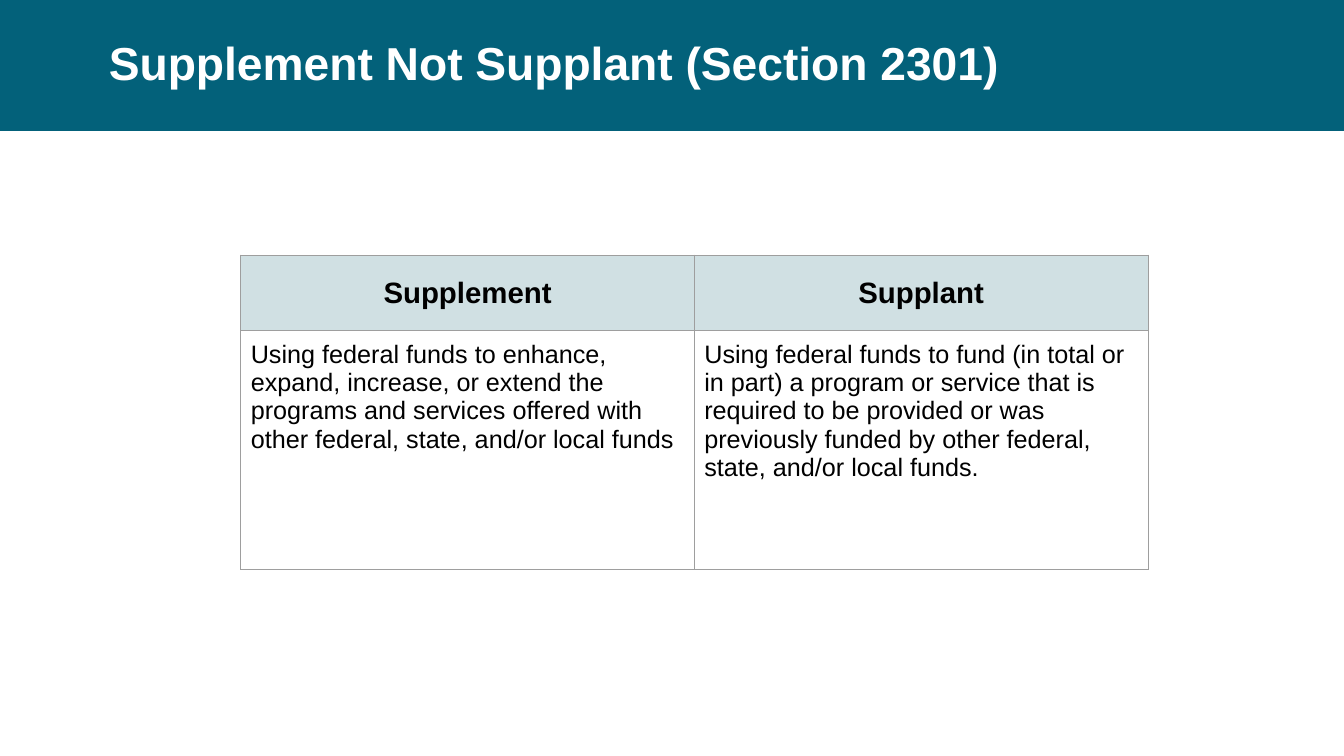
"""Build the Supplement Not Supplant slide."""
from lxml import etree
from pptx import Presentation
from pptx import util as u
from pptx.dml.color import RGBColor
from pptx.enum import shapes, text
from pptx.oxml.ns import qn

TEAL, PALE, GREY, WHITE, BLACK = "03617A", "D0E0E3", "9E9E9E", "FFFFFF", "000000"
WIDE, BAND = u.Cm(33.87), u.Cm(3.3)
HEADS = ("Supplement", "Supplant")
BODIES = (
    "Using federal funds to enhance, expand, increase, or extend the programs "
    "and services offered with other federal, state, and/or local funds",
    "Using federal funds to fund (in total or in part) a program or service that "
    "is required to be provided or was previously funded by other federal, "
    "state, and/or local funds.",
)


def paint(fill, hue):
    """Give a fill one solid colour."""
    fill.solid()
    fill.fore_color.rgb = RGBColor.from_string(hue)


def write(para, words, size, hue, bold=False):
    """Add one Arial run to a paragraph."""
    run = para.add_run()
    run.text = words
    font = run.font
    font.name, font.size, font.bold = "Arial", u.Pt(size), bold
    font.color.rgb = RGBColor.from_string(hue)


def head(slide, words):
    """Set the title on a full-width band."""
    title = slide.shapes.title
    band = slide.shapes.add_shape(shapes.MSO_SHAPE.RECTANGLE, 0, 0, WIDE, BAND)
    band.shadow.inherit = False
    paint(band.fill, TEAL)
    band.line.fill.background()
    title.element.addprevious(band.element)
    title.left, title.top = u.Cm(2.49), 0
    title.width, title.height = u.Cm(29.21), BAND
    frame = title.text_frame
    frame.auto_size = text.MSO_AUTO_SIZE.NONE
    frame.vertical_anchor = text.MSO_ANCHOR.MIDDLE
    para = frame.paragraphs[0]
    para.alignment = text.PP_ALIGN.LEFT
    para.line_spacing = 0.9
    write(para, words, 33, WHITE, True)


def edge(cell):
    """Draw a thin grey border on every side of a cell."""
    props = cell._tc.get_or_add_tcPr()
    for side in ("a:lnL", "a:lnR", "a:lnT", "a:lnB"):
        line = etree.SubElement(props, qn(side), w=str(u.Pt(0.75)))
        solid = etree.SubElement(line, qn("a:solidFill"))
        etree.SubElement(solid, qn("a:srgbClr"), val=GREY)


def fill_cell(cell, words, top):
    """Format and fill a heading or body cell."""
    edge(cell)
    pad = u.Cm(0.25)
    cell.margin_left = cell.margin_right = pad
    cell.margin_top = cell.margin_bottom = pad
    para = cell.text_frame.paragraphs[0]
    if top:
        paint(cell.fill, PALE)
        cell.vertical_anchor = text.MSO_ANCHOR.MIDDLE
        para.alignment = text.PP_ALIGN.CENTER
    else:
        cell.fill.background()
        cell.vertical_anchor = text.MSO_ANCHOR.TOP
    write(para, words, 21 if top else 18, BLACK, top)


def grid(slide, rows):
    """Add the comparison table."""
    highs = (u.Cm(1.9), u.Cm(6.02))
    table = slide.shapes.add_table(
        len(rows), len(rows[0]), u.Cm(6.07), u.Cm(6.43), u.Cm(22.86), sum(highs)
    ).table
    table.first_row = table.horz_banding = False
    for r, (row, high) in enumerate(zip(rows, highs)):
        table.rows[r].height = high
        for c, words in enumerate(row):
            fill_cell(table.cell(r, c), words, r == 0)


def main():
    """Build and save the slide."""
    deck = Presentation()
    deck.slide_width, deck.slide_height = WIDE, u.Cm(19.05)
    slide = deck.slides.add_slide(deck.slide_layouts[5])
    head(slide, "Supplement Not Supplant (Section 2301)")
    grid(slide, (HEADS, BODIES))
    deck.save("out.pptx")


if __name__ == "__main__":
    main()
